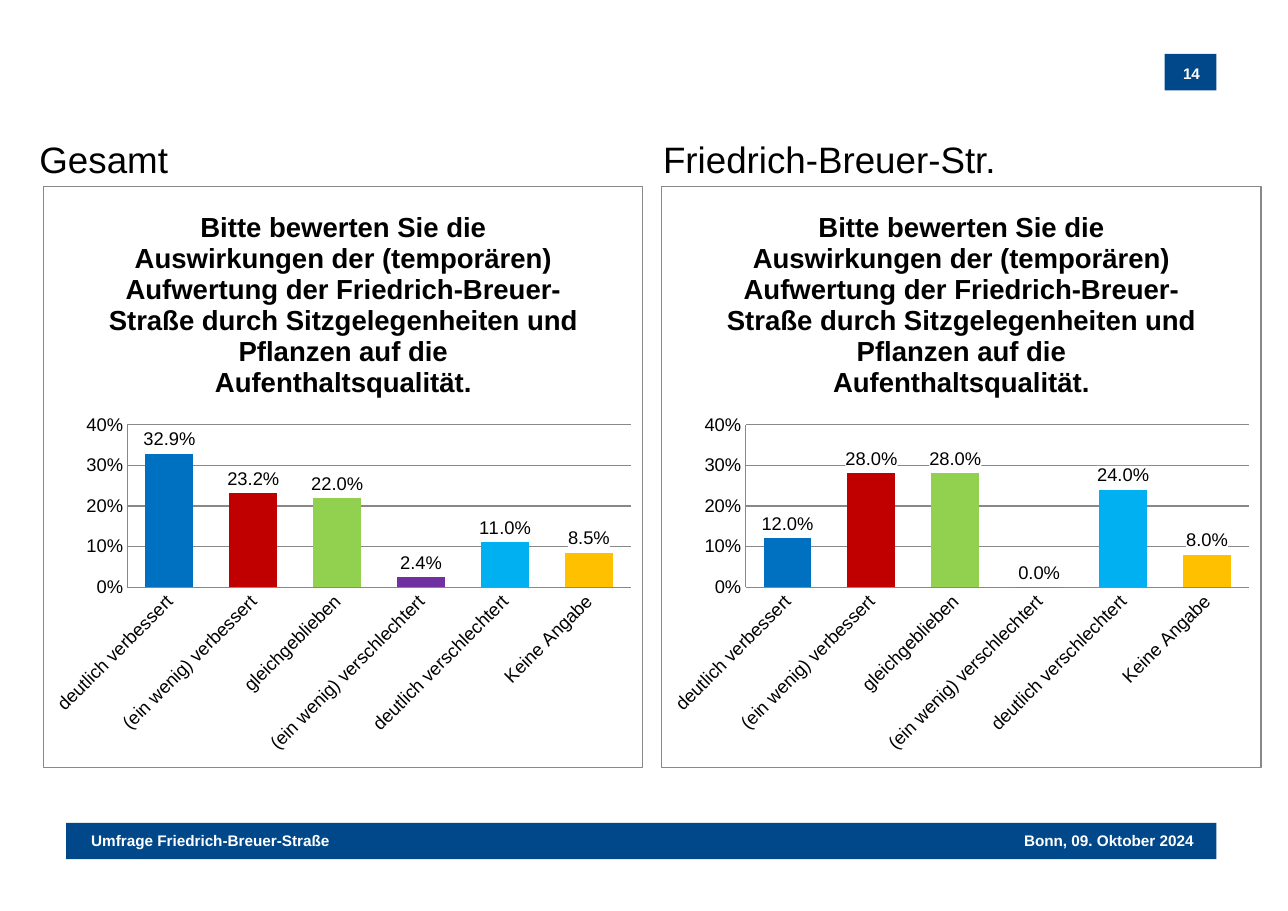
from lxml import etree
from pptx import Presentation
from pptx.chart.data import CategoryChartData
from pptx.dml.color import RGBColor
from pptx.enum.chart import XL_CHART_TYPE, XL_LABEL_POSITION, XL_TICK_MARK
from pptx.enum.shapes import MSO_SHAPE
from pptx.enum.text import MSO_AUTO_SIZE, PP_ALIGN
from pptx.oxml import parse_xml
from pptx.oxml.ns import nsdecls, qn
from pptx.util import Inches, Pt

RECTANGLE = MSO_SHAPE.RECTANGLE
COLUMNS = XL_CHART_TYPE.COLUMN_CLUSTERED
OUTSIDE_END = XL_LABEL_POSITION.OUTSIDE_END
NO_TICK = XL_TICK_MARK.NONE
FIT_SHAPE = MSO_AUTO_SIZE.SHAPE_TO_FIT_TEXT
LEFT, CENTER, RIGHT = PP_ALIGN.LEFT, PP_ALIGN.CENTER, PP_ALIGN.RIGHT

FONT = "Arial"
COLORS = {
    "navy": "01488A", "white": "FFFFFF", "black": "000000", "gray": "888888",
    "blue": "0070C0", "red": "C00000", "green": "92D050",
    "purple": "7030A0", "cyan": "00B0F0", "amber": "FFC000",
}
BAR_COLORS = ["blue", "red", "green", "purple", "cyan", "amber"]
CATEGORIES = [
    "deutlich verbessert", "(ein wenig) verbessert", "gleichgeblieben",
    "(ein wenig) verschlechtert", "deutlich verschlechtert", "Keine Angabe",
]
QUESTION = (
    "Bitte bewerten Sie die Auswirkungen der (temporären) Aufwertung der "
    "Friedrich-Breuer-Straße durch Sitzgelegenheiten und Pflanzen auf die "
    "Aufenthaltsqualität."
)
PLOT_LAYOUT = {"x": 0.14, "y": 0.41, "w": 0.84, "h": 0.28}
PANELS = [
    ("Gesamt", 2.22, 3.34, [0.329, 0.232, 0.22, 0.024, 0.11, 0.085]),
    ("Friedrich-Breuer-Str.", 50.64, 51.33, [0.12, 0.28, 0.28, 0, 0.24, 0.08]),
]


def color(name):
    return RGBColor.from_string(COLORS[name])


def box_properties(border=None):
    line = "<a:ln><a:noFill/></a:ln>"
    if border:
        line = (f'<a:ln w="9525"><a:solidFill><a:srgbClr val="{COLORS[border]}"/>'
                "</a:solidFill></a:ln>")
    return parse_xml(
        f'<c:spPr {nsdecls("c", "a")}><a:solidFill>'
        f'<a:srgbClr val="{COLORS["white"]}"/></a:solidFill>{line}</c:spPr>'
    )


class SurveySlide:
    def __init__(self, presentation):
        self.width = presentation.slide_width
        self.height = presentation.slide_height
        self.slide = presentation.slides.add_slide(presentation.slide_layouts[6])

    def place(self, left, top, width, height):
        return (round(self.width * left / 100), round(self.height * top / 100),
                round(self.width * width / 100), round(self.height * height / 100))

    def style(self, font, size, name="black", bold=False):
        font.name = FONT
        font.size = Pt(size)
        font.bold = bold
        font.color.rgb = color(name)

    def bar(self, *area):
        shape = self.slide.shapes.add_shape(RECTANGLE, *self.place(*area))
        shape.shadow.inherit = False
        shape.fill.solid()
        shape.fill.fore_color.rgb = color("navy")
        shape.line.fill.background()

    def text(self, words, area, size, name="black", bold=False, align=LEFT, wrap=True):
        text_frame = self.slide.shapes.add_textbox(*self.place(*area)).text_frame
        text_frame.word_wrap = wrap
        text_frame.auto_size = FIT_SHAPE
        text_frame.text = words
        paragraph = text_frame.paragraphs[0]
        paragraph.alignment = align
        self.style(paragraph.runs[0].font, size, name, bold)

    def axis(self, axis):
        axis.major_tick_mark = axis.minor_tick_mark = NO_TICK
        self.style(axis.tick_labels.font, 12)
        self.line(axis.format.line)

    def line(self, line):
        line.color.rgb = color("gray")
        line.width = Pt(0.75)

    def chart(self, values, *area):
        data = CategoryChartData(number_format="0.0%")
        data.categories = CATEGORIES
        data.add_series("Series 1", values)
        chart = self.slide.shapes.add_chart(COLUMNS, *self.place(*area), data).chart
        chart.has_legend = False
        self.style(chart.font, 10)
        chart.has_title = True
        chart.chart_title.text_frame.text = QUESTION
        title = chart.chart_title.text_frame.paragraphs[0]
        self.style(title.runs[0].font, 18, bold=True)
        chart.chart_title.include_in_layout = False

        self.axis(chart.category_axis)
        labels = chart.category_axis.tick_labels
        labels.font._element.getparent().getparent().getparent().find(
            qn("a:bodyPr")).set("rot", "-2700000")
        value_axis = chart.value_axis
        self.axis(value_axis)
        value_axis.minimum_scale, value_axis.maximum_scale = 0, 0.4
        value_axis.major_unit = 0.1
        value_axis.tick_labels.number_format = "0%"
        value_axis.tick_labels.number_format_is_linked = False
        self.line(value_axis.major_gridlines.format.line)

        plot = chart.plots[0]
        plot.gap_width = 75
        plot.vary_by_categories = False
        series = plot.series[0]
        for index, name in enumerate(BAR_COLORS):
            fill = series.points[index].format.fill
            fill.solid()
            fill.fore_color.rgb = color(name)
        data_labels = series.data_labels
        data_labels.show_value = True
        data_labels.position = OUTSIDE_END
        data_labels.number_format = "0.0%"
        data_labels.number_format_is_linked = False
        self.style(data_labels.font, 12)
        self.backgrounds(chart, data_labels)

    def backgrounds(self, chart, data_labels):
        data_labels._element.find(qn("c:numFmt")).addnext(box_properties())
        chart_space = chart._chartSpace
        chart_space.find(qn("c:chart")).addnext(box_properties("gray"))
        plot_area = chart_space.find(qn("c:chart")).find(qn("c:plotArea"))
        plot_area.append(box_properties())
        for layout in plot_area.findall(qn("c:layout")):
            plot_area.remove(layout)
        layout = etree.Element(qn("c:layout"))
        manual = etree.SubElement(layout, qn("c:manualLayout"))
        settings = {"layoutTarget": "inner", "xMode": "edge", "yMode": "edge", **PLOT_LAYOUT}
        for tag, value in settings.items():
            etree.SubElement(manual, qn(f"c:{tag}")).set("val", str(value))
        plot_area.insert(0, layout)


def main():
    presentation = Presentation()
    presentation.slide_width = Inches(11.69)
    presentation.slide_height = Inches(8.27)
    survey = SurveySlide(presentation)

    survey.bar(90.42, 5.93, 4.02, 3.99)
    survey.bar(5.13, 90.33, 89.31, 3.99)
    for words, area, align, wrap in [
        ("Umfrage Friedrich-Breuer-Straße", (6.24, 90.69, 20.44, 3.26), LEFT, False),
        ("Bonn, 09. Oktober 2024", (78.53, 90.69, 14.97, 3.26), RIGHT, False),
        ("14", (90.33, 6.41, 4.36, 3.26), CENTER, True),
    ]:
        survey.text(words, area, 10, "white", True, align, wrap)

    for heading, heading_left, chart_left, values in PANELS:
        survey.chart(values, chart_left, 20.44, 46.62, 63.85)
        survey.text(heading, (heading_left, 14.39, 30.28, 6.05), 24)

    presentation.save("out.pptx")


if __name__ == "__main__":
    main()
